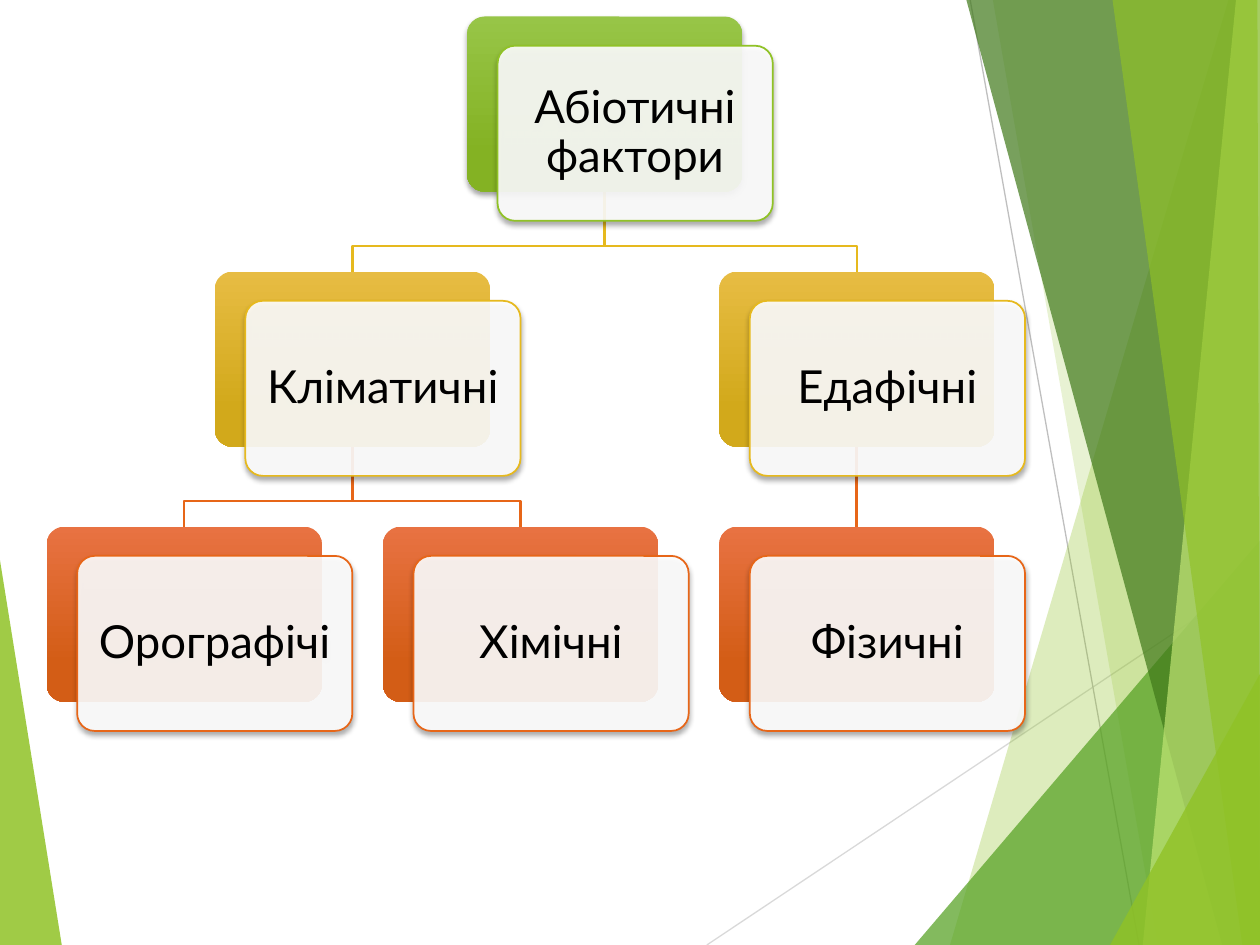
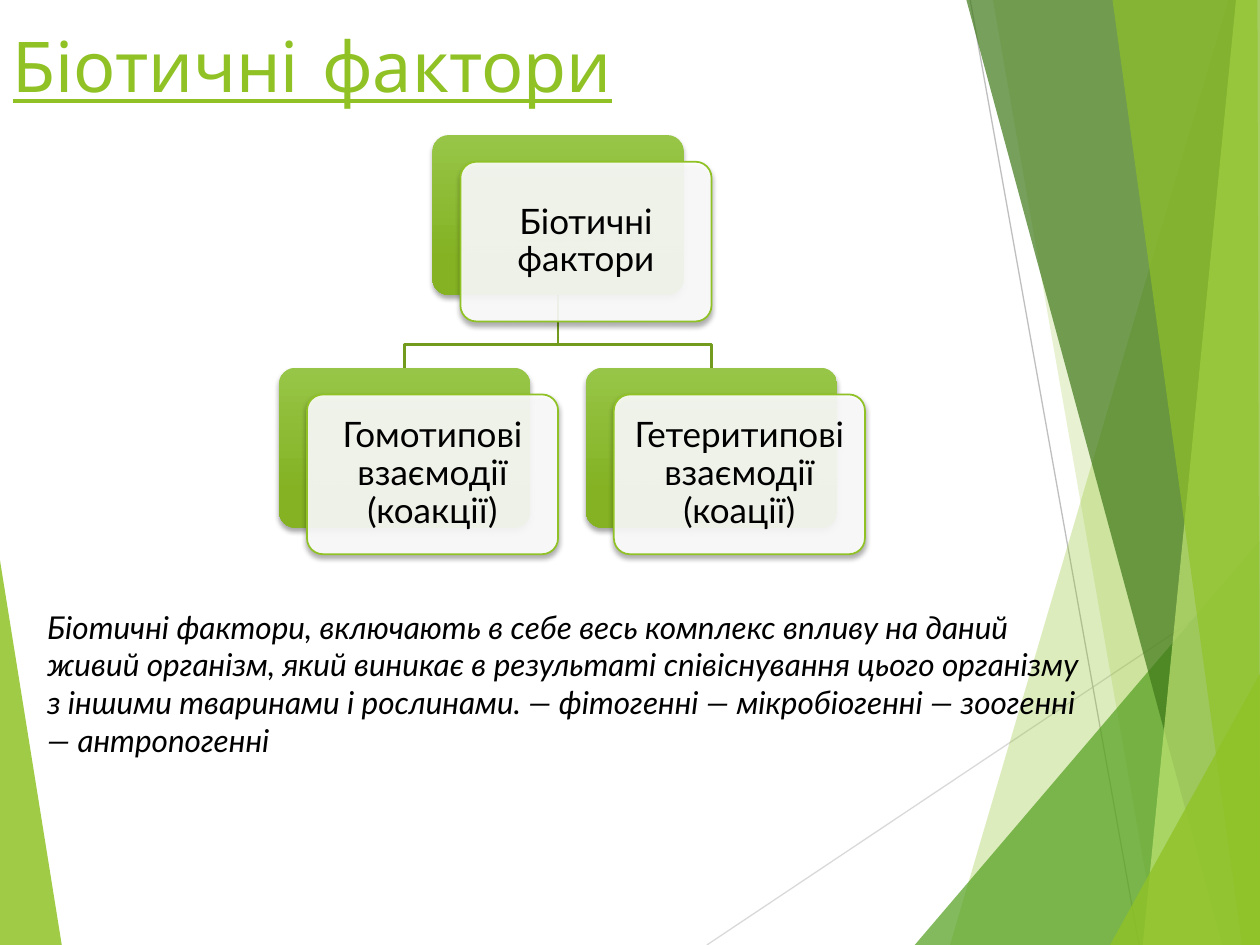
from lxml import etree
from pptx import Presentation
from pptx.dml.color import RGBColor
from pptx.enum.shapes import MSO_CONNECTOR, MSO_SHAPE
from pptx.enum.text import MSO_ANCHOR, MSO_AUTO_SIZE, PP_ALIGN
from pptx.oxml.ns import qn
from pptx.util import Inches, Pt

STRAIGHT = MSO_CONNECTOR.STRAIGHT
ROUNDED = MSO_SHAPE.ROUNDED_RECTANGLE
MIDDLE, BOTTOM = MSO_ANCHOR.MIDDLE, MSO_ANCHOR.BOTTOM
LEFT, CENTER = PP_ALIGN.LEFT, PP_ALIGN.CENTER
NO_FIT = MSO_AUTO_SIZE.NONE
TOP_SITE, BOTTOM_SITE = 0, 2

W, H = Inches(10), Inches(7.5)
TITLE_FONT, BODY_FONT = "Comic Neue", "Lato"
COL_PITCH, ROW_PITCH = 11 / 9, 1.457
SHIFT_X, SHIFT_Y = 1 / 9, 1 / 6
BEND = 0.68

COLORS = {
    "lime": "90C226", "lime_top": "97C547", "lime_low": "84B223",
    "gold": "E6B91E", "gold_top": "E7BC43", "gold_low": "D2A91B",
    "rust": "E76618", "rust_top": "E87242", "rust_low": "D35D16",
    "olive": "739B1E", "green": "54A021", "forest": "3F7819",
    "pale": "C0E474", "light_gray": "D9D9D9", "gray": "BFBFBF",
    "white": "FFFFFF", "black": "000000",
}

LEFT_BAND = ("lime", 85, [(0, 59.3), (4.9, 100), (0, 100)])
RAYS = [
    ("light_gray", (56.1, 100), (100, 60.9)),
    ("gray", (77, 0), (90.4, 100)),
]
RIGHT_BANDS = [
    ("lime", 30, [(97.5, 0), (75.4, 100), (100, 100), (100, 0)]),
    ("lime", 20, [(78.8, 0), (91.9, 100), (100, 100), (100, 0)]),
    ("green", 72, [(72.6, 100), (100, 57.2), (100, 100)]),
    ("forest", 70, [(76.7, 0), (97, 100), (100, 100), (100, 0)]),
    ("pale", 70, [(98.1, 0), (90.7, 100), (100, 100), (100, 0)]),
    ("lime", 65, [(88.3, 0), (98.6, 100), (100, 100), (99.8, 0)]),
    ("lime", 80, [(88.1, 100), (100, 71.3), (100, 100)]),
]

ABIOTIC = [
    ("Абіотичні фактори", 1.25, 0, None, "lime"),
    ("Кліматичні", 0.5, 1, 0, "gold"),
    ("Едафічні", 2, 1, 0, "gold"),
    ("Орографічі", 0, 2, 1, "rust"),
    ("Хімічні", 1, 2, 1, "rust"),
    ("Фізичні", 2, 2, 2, "rust"),
]
BIOTIC = [
    ("Біотичні фактори", 0.5, 0, None, "lime"),
    ("Гомотипові взаємодії (коакції)", 0, 1, 0, "lime"),
    ("Гетеритипові взаємодії (коації)", 1, 1, 0, "lime"),
]
BIOTIC_TEXT = (
    "Біотичні фактори, включають в себе весь комплекс впливу на даний "
    "живий організм, який виникає в результаті співіснування цього організму "
    "з іншими тваринами і рослинами. — фітогенні — мікробіогенні — "
    "зоогенні — антропогенні"
)


def rgb(name):
    return RGBColor.from_string(COLORS[name])


def share(x, y):
    return int(W * x / 100), int(H * y / 100)


def share_box(x, y, w, h):
    return *share(x, y), *share(w, h)


def place(sp, box):
    sp.left, sp.top, sp.width, sp.height = box


def set_font(p, name, size, color):
    p.font.name = name
    p.font.size = Pt(size)
    p.font.color.rgb = rgb(color)


def paint(sp, color, alpha):
    sp.fill.solid()
    sp.fill.fore_color.rgb = rgb(color)
    clr = sp.element.spPr.xpath("./a:solidFill/a:srgbClr")[0]
    etree.SubElement(clr, qn("a:alpha"), val=str(alpha * 1000))


def drop_shadow(sp):
    sp.shadow.inherit = False
    effects = sp.element.spPr.find(qn("a:effectLst"))
    outer = etree.SubElement(effects, qn("a:outerShdw"), blurRad=str(Pt(3)),
                             dist=str(Pt(2)), dir="5400000", rotWithShape="0")
    clr = etree.SubElement(outer, qn("a:srgbClr"), val=COLORS["black"])
    etree.SubElement(clr, qn("a:alpha"), val="35000")


def add_path(s, points, close):
    builder = s.shapes.build_freeform(*points[0], scale=1.0)
    builder.add_line_segments(points[1:], close=close)
    sp = builder.convert_to_shape()
    sp.shadow.inherit = False
    return sp


def add_line(s, start, end, color, width):
    cxn = s.shapes.add_connector(STRAIGHT, *start, *end)
    cxn.line.color.rgb = rgb(color)
    cxn.line.width = Pt(width)
    etree.SubElement(cxn.element.spPr, qn("a:effectLst"))
    return cxn


def add_band(s, color, alpha, points):
    sp = add_path(s, [share(*pt) for pt in points], True)
    paint(sp, color, alpha)
    sp.line.fill.background()
    return sp


def decorate_master(prs, s):
    parts = [add_band(s, *LEFT_BAND)]
    parts += [add_line(s, share(*a), share(*b), color, 0.75) for color, a, b in RAYS]
    parts += [add_band(s, *band) for band in RIGHT_BANDS]
    tree = prs.slide_master.shapes.element
    for i, sp in enumerate(parts):
        sp.element.xpath(".//p:cNvPr")[0].set("id", str(100 + i))
        tree.insert(2 + i, sp.element)


def add_card(s, box, text, palette, size, inset):
    x, y, w, h = box
    back = s.shapes.add_shape(ROUNDED, *box)
    back.fill.gradient()
    back.fill.gradient_angle = 270
    stops = zip(back.fill.gradient_stops, (0, 0.78), ("_top", "_low"))
    for stop, position, tone in stops:
        stop.position = position
        stop.color.rgb = rgb(palette + tone)
    back.line.fill.background()
    if palette == "lime":
        drop_shadow(back)
    else:
        back.shadow.inherit = False

    front = s.shapes.add_shape(ROUNDED, int(x + w * SHIFT_X), int(y + h * SHIFT_Y), w, h)
    paint(front, "white", 90)
    front.line.color.rgb = rgb(palette)
    front.line.width = Pt(1)
    drop_shadow(front)
    for sp in (back, front):
        sp.adjustments[0] = 0.1

    tf = front.text_frame
    tf.word_wrap = True
    tf.vertical_anchor = MIDDLE
    tf.margin_left = tf.margin_right = tf.margin_top = tf.margin_bottom = Inches(inset)
    p = tf.paragraphs[0]
    p.text = text
    p.alignment = CENTER
    p.line_spacing = 0.9
    set_font(p, BODY_FONT, size, "black")
    return back


def add_branch(s, parent, child, color):
    x1, y1 = parent.left + parent.width // 2, parent.top + parent.height
    x2, y2 = child.left + child.width // 2, child.top
    if parent.left == child.left:
        sp = add_line(s, (x1, y1), (x2, y2), color, 1.5)
        sp.begin_connect(parent, BOTTOM_SITE)
        sp.end_connect(child, TOP_SITE)
    else:
        bend = int(y1 + (y2 - y1) * BEND)
        sp = add_path(s, [(x1, y1), (x1, bend), (x2, bend), (x2, y2)], False)
        sp.fill.background()
        sp.line.color.rgb = rgb(color)
        sp.line.width = Pt(1.5)
    s.shapes.element.insert(2, sp.element)


def add_tree(s, box, nodes, size, inset, branch_color=None):
    x, y, w, h = box
    last_col = max(node[1] for node in nodes)
    last_row = max(node[2] for node in nodes)
    card_w = int(w / (1 + last_col * COL_PITCH + SHIFT_X))
    card_h = int(h / (1 + last_row * ROW_PITCH + SHIFT_Y))
    cards = []
    for text, col, row, _, palette in nodes:
        left = int(x + col * COL_PITCH * card_w)
        top = int(y + row * ROW_PITCH * card_h)
        cards.append(add_card(s, (left, top, card_w, card_h), text, palette, size, inset))
    for card, (_, _, _, parent, palette) in zip(cards, nodes):
        if parent is not None:
            add_branch(s, cards[parent], card, branch_color or palette)


def add_title(s, box, text):
    sp = s.shapes.title
    place(sp, box)
    tf = sp.text_frame
    tf.auto_size = NO_FIT
    tf.vertical_anchor = BOTTOM
    p = tf.paragraphs[0]
    p.text = text
    p.alignment = LEFT
    p.font.underline = True
    set_font(p, TITLE_FONT, 40, "lime")


def add_description(s, box, text):
    tf = s.shapes.add_textbox(*box).text_frame
    tf.word_wrap = True
    p = tf.paragraphs[0]
    p.text = text
    p.font.italic = True
    set_font(p, BODY_FONT, 18, "black")


def build_abiotic(s):
    add_tree(s, share_box(3.7, 1.75, 77.65, 75.6), ABIOTIC, 26, 0.11)


def build_biotic(s):
    add_title(s, share_box(0, 0.4, 69.4, 11.5), "Біотичні фактори")
    add_description(s, share_box(2.75, 63.65, 85, 21.6), BIOTIC_TEXT)
    add_tree(s, share_box(22.15, 14.3, 46.5, 44.35), BIOTIC, 20, 0.08, "olive")


def main():
    prs = Presentation()
    prs.slide_width, prs.slide_height = W, H
    title_only, blank = prs.slide_layouts[5], prs.slide_layouts[6]
    s = prs.slides.add_slide(blank)
    decorate_master(prs, s)
    build_abiotic(s)
    build_biotic(prs.slides.add_slide(title_only))
    prs.save("out.pptx")


if __name__ == "__main__":
    main()
